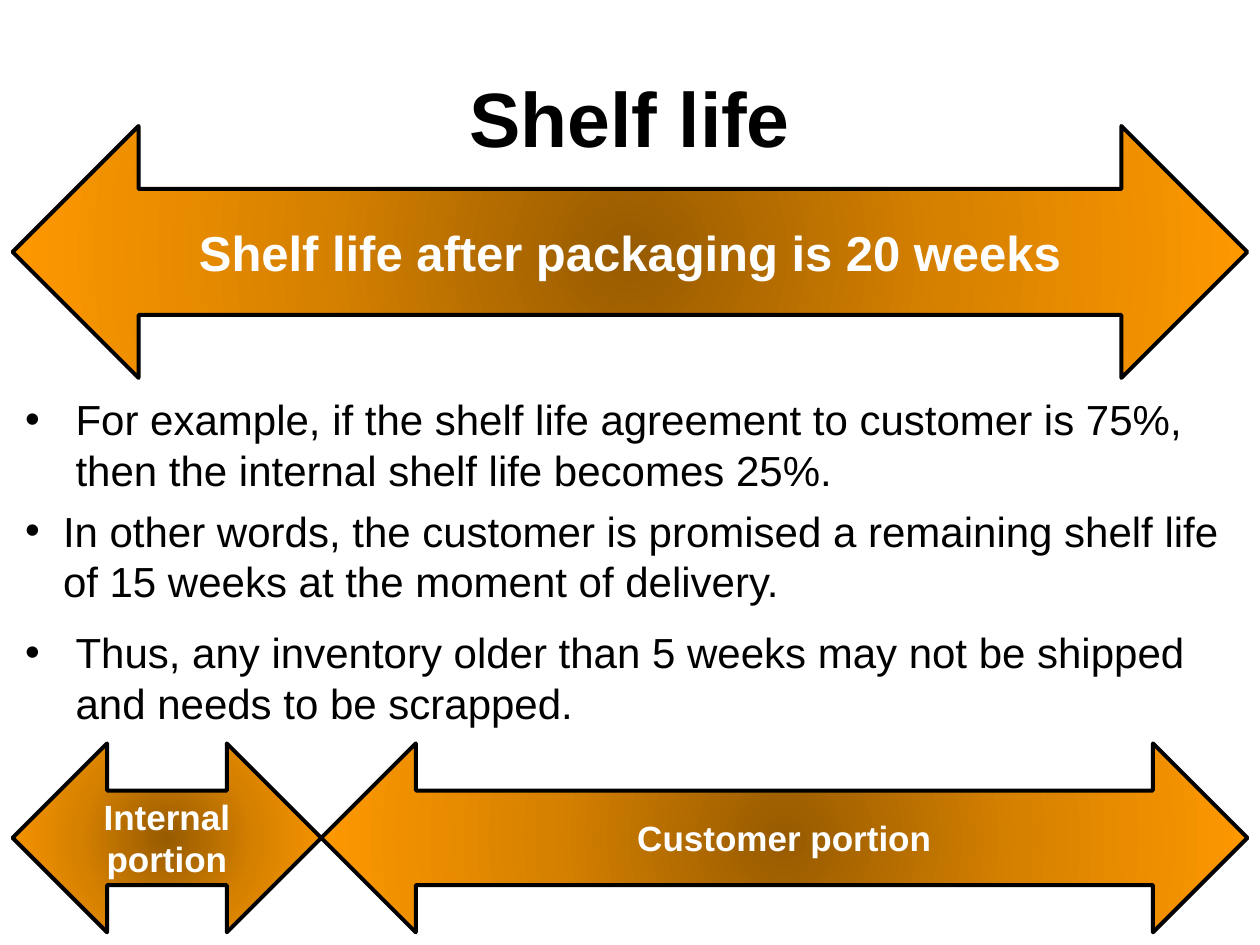
from lxml import etree
from pptx import Presentation
from pptx import util as u
from pptx.dml.color import RGBColor
from pptx.enum import shapes, text

HEX = {"ink": "000000", "label": "FFFFFF",
       "core": "975B00", "mid": "D78100", "rim": "FF9900"}
NS = "http://schemas.openxmlformats.org/drawingml/2006/main"

deck = Presentation()
deck.slide_width, deck.slide_height = u.Inches(10), u.Inches(7.5)
W, H = deck.slide_width, deck.slide_height
slide = deck.slides.add_slide(deck.slide_layouts[1])

# Shares of the slide: one margin, and a full span between the margins
edge, span = 0.01, 0.98


def style(par, size, hue, bold=False):
    for run in par.runs:
        font = run.font
        font.name, font.size, font.bold = "Arial", u.Pt(size), bold
        font.color.rgb = RGBColor.from_string(HEX[hue])


def place(shape, left, top, wide, high):
    shape.left, shape.top = round(left * W), round(top * H)
    shape.width, shape.height = round(wide * W), round(high * H)
    frame = shape.text_frame
    frame.word_wrap = True
    frame.auto_size = text.MSO_AUTO_SIZE.NONE
    frame.vertical_anchor = text.MSO_ANCHOR.MIDDLE
    return frame


# Title
title = place(slide.shapes.title, 0.05, 0.04, 0.9, 1 / 6)
title.text = "Shelf life"
title.paragraphs[0].alignment = text.PP_ALIGN.CENTER
style(title.paragraphs[0], 44, "ink", True)

# Bullet list: wording, hanging indent in inches, space before in points
points = [
    ("For example, if the shelf life agreement to customer is 75%, "
     "then the internal shelf life becomes 25%.", 0.4, 12),
    ("In other words, the customer is promised a remaining shelf life "
     "of 15 weeks at the moment of delivery.", 0.3, 6),
    ("Thus, any inventory older than 5 weeks may not be shipped "
     "and needs to be scrapped.", 0.4, 12),
]
body = place(slide.placeholders[1], edge, 0.4, span, 2.9 / 7.5)
body.text = "\n".join(words for words, _, _ in points)
for par, (_, hang, gap) in zip(body.paragraphs, points):
    par.space_before = u.Pt(gap)
    style(par, 24, "ink")
    props = par._p.get_or_add_pPr()
    props.set("marL", str(u.Inches(hang)))
    props.set("indent", str(-u.Inches(hang)))
    etree.SubElement(props, f"{{{NS}}}buChar").set("char", "•")

# Radial fill, dark in the centre
stops = "".join(
    f'<a:gs pos="{pos}"><a:srgbClr val="{HEX[hue]}"/></a:gs>'
    for pos, hue in ((0, "core"), (50000, "mid"), (100000, "rim")))
glow = (f'<a:gradFill xmlns:a="{NS}" rotWithShape="1"><a:gsLst>{stops}</a:gsLst>'
        '<a:path path="circle"><a:fillToRect l="50000" t="50000" r="50000" '
        'b="50000"/></a:path></a:gradFill>')

# Arrows: the whole shelf life above, its 25% and 75% parts below
part = span / 4
arrows = [
    ("Shelf life after packaging is 20 weeks", edge, 1 / 7.5, span, 2 / 7.5, 28),
    ("Internal portion", edge, 5.9 / 7.5, part, 0.2, 20),
    ("Customer portion", edge + part, 5.9 / 7.5, 3 * part, 0.2, 20),
]
for words, left, top, wide, high, size in arrows:
    arrow = slide.shapes.add_shape(shapes.MSO_SHAPE.LEFT_RIGHT_ARROW, 0, 0, 0, 0)
    frame = place(arrow, left, top, wide, high)
    arrow.shadow.inherit = False
    arrow.line.color.rgb = RGBColor.from_string(HEX["ink"])
    arrow.line.width = u.Pt(2.25)
    geom = arrow._element.spPr.find(f"{{{NS}}}prstGeom")
    geom.addnext(etree.fromstring(glow))
    frame.text = words
    frame.paragraphs[0].alignment = text.PP_ALIGN.CENTER
    style(frame.paragraphs[0], size, "label", True)

deck.save("out.pptx")
